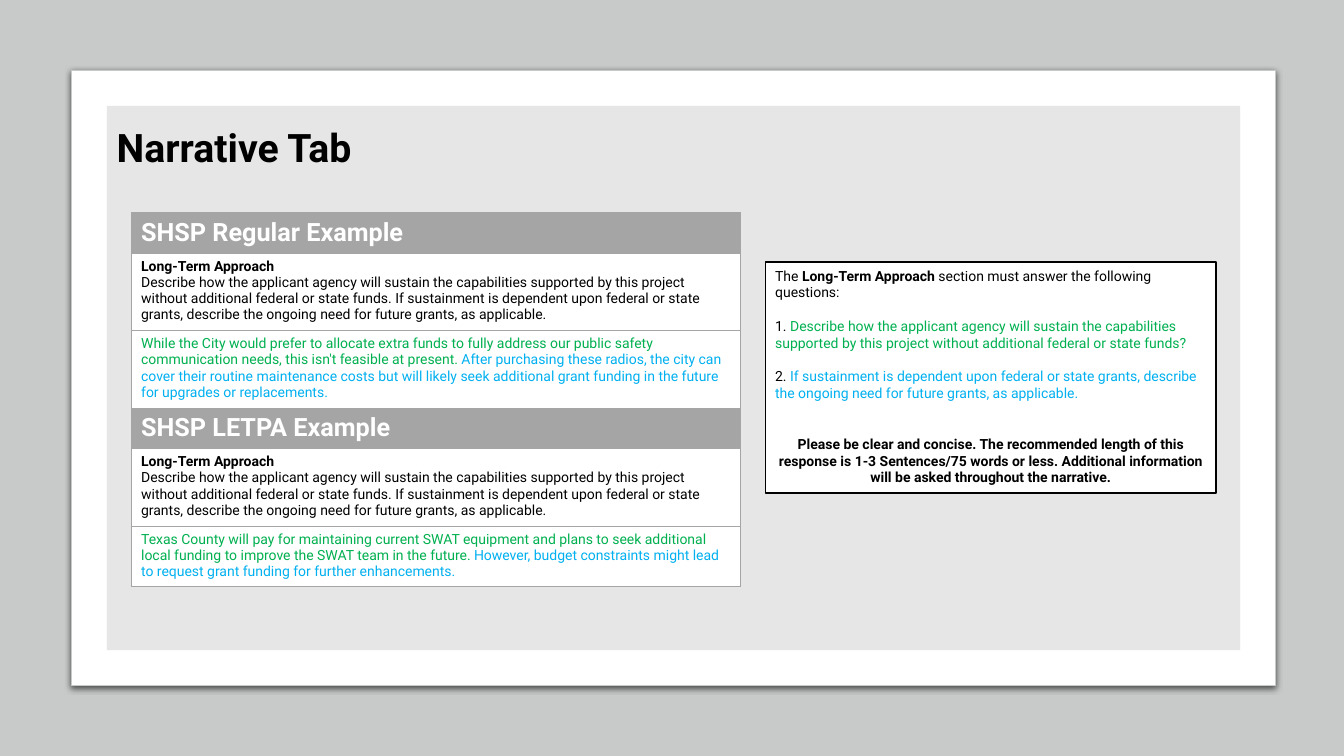
from lxml import etree
from pptx import Presentation
from pptx.dml.color import RGBColor
from pptx.enum.shapes import MSO_SHAPE
from pptx.enum.text import MSO_ANCHOR, PP_ALIGN
from pptx.oxml import parse_xml
from pptx.oxml.ns import nsdecls, qn
from pptx.util import Inches, Pt

BACKDROP = RGBColor(0xC8, 0xCA, 0xCA)
PANEL = RGBColor(0xE7, 0xE6, 0xE6)
HEADER = RGBColor(0xA5, 0xA5, 0xA5)
WHITE = RGBColor(0xFF, 0xFF, 0xFF)
BLACK = RGBColor(0, 0, 0)
GREEN = RGBColor(0, 0xB0, 0x50)
BLUE = RGBColor(0, 0xB0, 0xF0)
FONT = "Roboto"

# A paragraph is a list of (text, colour, bold) pieces.
TITLE = [("Narrative Tab", BLACK, True)]
PROMPT = [
    [("Long-Term Approach", BLACK, True)],
    [("Describe how the applicant agency will sustain the capabilities supported by this "
      "project without additional federal or state funds. If sustainment is dependent upon "
      "federal or state grants, describe the ongoing need for future grants, as applicable.",
      BLACK, False)],
]
# Heading, answer to question 1, answer to question 2, answer row height
EXAMPLES = [
    ("SHSP Regular Example",
     "While the City would prefer to allocate extra funds to fully address our public safety "
     "communication needs, this isn't feasible at present. ",
     "After purchasing these radios, the city can cover their routine maintenance costs but "
     "will likely seek additional grant funding in the future for upgrades or replacements.",
     0.77),
    ("SHSP LETPA Example",
     "Texas County will pay for maintaining current SWAT equipment and plans to seek "
     "additional local funding to improve the SWAT team in the future. ",
     "However, budget constraints might lead to request grant funding for further enhancements.",
     0.6),
]
GUIDANCE = [
    [("The ", BLACK, False), ("Long-Term Approach ", BLACK, True),
     ("section must answer the following questions:", BLACK, False)],
    [("1. ", BLACK, False),
     ("Describe how the applicant agency will sustain the capabilities supported by this "
      "project without additional federal or state funds?", GREEN, False)],
    [("2. ", BLACK, False),
     ("If sustainment is dependent upon federal or state grants, describe the ongoing need "
      "for future grants, as applicable.", BLUE, False)],
    [("Please be clear and concise. The recommended length of this response is 1-3 "
      "Sentences/75 words or less. Additional information will be asked throughout the "
      "narrative.", BLACK, True)],
]
GUIDANCE_GAPS = [0, 12, 12, 24]
HEADING_HEIGHT, PROMPT_HEIGHT = 0.4, 0.77
TABLE_LEFT, TABLE_TOP, TABLE_WIDTH = 1.3, 2.11, 6.04


def add_box(s, left, top, width, height, fill, line=None, line_width=1):
    sp = s.shapes.add_shape(MSO_SHAPE.RECTANGLE, Inches(left), Inches(top),
                            Inches(width), Inches(height))
    sp.shadow.inherit = False
    sp.fill.solid()
    sp.fill.fore_color.rgb = fill
    if line is None:
        sp.line.fill.background()
    else:
        sp.line.color.rgb = line
        sp.line.width = Pt(line_width)
    return sp


def write(tf, paragraphs, size):
    tf.word_wrap = True
    for i, pieces in enumerate(paragraphs):
        p = tf.paragraphs[0] if i == 0 else tf.add_paragraph()
        p.alignment = PP_ALIGN.LEFT
        for text, colour, bold in pieces:
            r = p.add_run()
            r.text = text
            r.font.name = FONT
            r.font.size = Pt(size)
            r.font.bold = bold
            r.font.color.rgb = colour


def add_card_shadow(sp):
    effects = sp._element.spPr.find(qn("a:effectLst"))
    effects.append(parse_xml(
        f'<a:outerShdw {nsdecls("a")} blurRad="{Pt(4.5)}" dist="{Pt(1.5)}" dir="5400000" '
        'algn="t" rotWithShape="0"><a:srgbClr val="000000"><a:alpha val="63000"/>'
        '</a:srgbClr></a:outerShdw>'))


def fill_cell(cell, fill):
    """Fill the cell and outline it with thin grey borders."""
    tcPr = cell._tc.get_or_add_tcPr()
    for side in ("lnL", "lnR", "lnT", "lnB"):
        ln = etree.SubElement(tcPr, qn(f"a:{side}"), w=str(Pt(0.5)))
        solid = etree.SubElement(ln, qn("a:solidFill"))
        etree.SubElement(solid, qn("a:srgbClr"), val=str(HEADER))
    cell.fill.solid()
    cell.fill.fore_color.rgb = fill


def add_examples(s):
    rows = []
    for heading, first, second, height in EXAMPLES:
        rows += [
            ([[(heading, WHITE, True)]], 18, HEADER, HEADING_HEIGHT),
            (PROMPT, 10, WHITE, PROMPT_HEIGHT),
            ([[(first, GREEN, False), (second, BLUE, False)]], 10, WHITE, height),
        ]
    total = sum(row[3] for row in rows)
    table = s.shapes.add_table(len(rows), 1, Inches(TABLE_LEFT), Inches(TABLE_TOP),
                               Inches(TABLE_WIDTH), Inches(total)).table
    for i, (paragraphs, size, fill, height) in enumerate(rows):
        table.rows[i].height = Inches(height)
        cell = table.cell(i, 0)
        fill_cell(cell, fill)
        write(cell.text_frame, paragraphs, size)


def main():
    prs = Presentation()
    prs.slide_width, prs.slide_height = Inches(13.33), Inches(7.5)
    s = prs.slides.add_slide(prs.slide_layouts[6])

    add_box(s, 0, 0, 13.33, 7.5, BACKDROP)
    add_card_shadow(add_box(s, 0.71, 0.7, 11.94, 6.1, WHITE, BACKDROP, 0.75))
    add_box(s, 1.06, 1.05, 11.24, 5.4, PANEL)

    tf = add_box(s, 7.59, 2.6, 4.47, 2.29, WHITE, BLACK).text_frame
    tf.vertical_anchor = MSO_ANCHOR.TOP
    write(tf, GUIDANCE, 10)
    for p, gap in zip(tf.paragraphs, GUIDANCE_GAPS):
        p.space_before = Pt(gap)
    tf.paragraphs[-1].alignment = PP_ALIGN.CENTER

    tf = s.shapes.add_textbox(Inches(1.06), Inches(1.06), Inches(11.24),
                              Inches(0.85)).text_frame
    tf.vertical_anchor = MSO_ANCHOR.MIDDLE
    write(tf, [TITLE], 28)
    tf.paragraphs[0].line_spacing = 0.9

    add_examples(s)
    prs.save("out.pptx")


if __name__ == "__main__":
    main()
